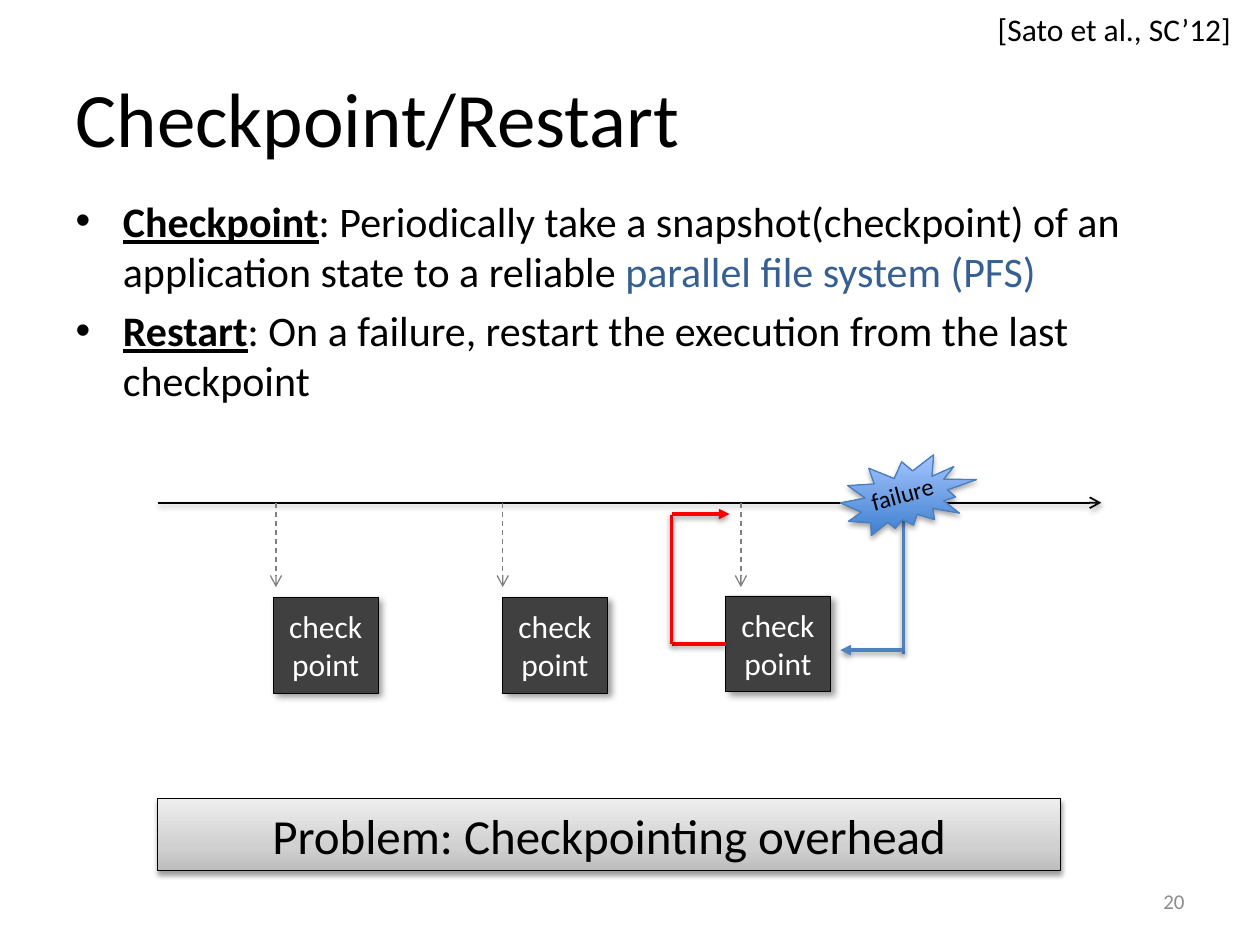
from dataclasses import dataclass

from lxml.etree import SubElement
from pptx import Presentation
from pptx.dml.color import RGBColor
from pptx.enum.dml import MSO_LINE
from pptx.enum.shapes import MSO_CONNECTOR, MSO_SHAPE as Shape
from pptx.enum.text import MSO_ANCHOR as Anchor, PP_ALIGN as Align
from pptx.oxml.ns import qn
from pptx.util import Emu, Pt

PX = 9144  # 100 px to the inch
FONT = "Calibri"
BLACK = RGBColor(0x00, 0x00, 0x00)
WHITE = RGBColor(0xFF, 0xFF, 0xFF)
RED = RGBColor(0xFF, 0x00, 0x00)
BLUE = RGBColor(0x4F, 0x81, 0xBD)
PFS_BLUE = RGBColor(0x37, 0x60, 0x92)
SEAL_LINE = RGBColor(0x4B, 0x7E, 0xBC)
GRAY = RGBColor(0x80, 0x80, 0x80)
NUMBER_GRAY = RGBColor(0x8C, 0x8C, 0x8C)
CHARCOAL = RGBColor(0x40, 0x40, 0x40)
BAR_STOPS = [(0, RGBColor(0xBD, 0xBD, 0xBD)), (35, RGBColor(0xD1, 0xD1, 0xD1)),
             (100, RGBColor(0xEE, 0xEE, 0xEE))]
SEAL_STOPS = [(0, RGBColor(0x3F, 0x80, 0xCE)), (100, RGBColor(0xA4, 0xC4, 0xFF))]


@dataclass(frozen=True)
class Box:
    left: int
    top: int
    width: int
    height: int

    def emu(self) -> list[Emu]:
        return [Emu(v * PX) for v in (self.left, self.top, self.width, self.height)]


@dataclass(frozen=True)
class Shadow:
    """Opacity in percent, blur and distance in points, angle in degrees."""
    opacity: int
    blur: float
    distance: float
    angle: int


@dataclass(frozen=True)
class Checkpoint:
    arrow_x: int
    left: int
    top: int


SOFT = Shadow(38, 3.1, 1.6, 90)
SEAL_SHADOW = Shadow(35, 3.1, 1.8, 90)
BOX_SHADOW = Shadow(40, 4, 3, 45)
TIMELINE_Y = 399
CHECKPOINTS = [Checkpoint(219, 217, 474), Checkpoint(399, 399, 474),
               Checkpoint(588, 576, 473)]


def add_text(p, text: str, *, size: int, color=BLACK, bold=False, underline=False,
             align=None) -> None:
    r = p.add_run()
    r.text = text
    f = r.font
    f.name, f.size, f.bold, f.underline = FONT, Pt(size), bold, underline
    f.color.rgb = color
    if align is not None:
        p.alignment = align


def set_effect(sp, shadow: Shadow | None) -> None:
    """Give a shape or connector its own shadow, or none."""
    spPr = sp._element.spPr
    effects = SubElement(spPr, qn("a:effectLst"))
    if shadow:
        outer = SubElement(effects, qn("a:outerShdw"), blurRad=str(Pt(shadow.blur)),
                           dist=str(Pt(shadow.distance)), dir=str(shadow.angle * 60000),
                           rotWithShape="0")
        clr = SubElement(outer, qn("a:srgbClr"), val=str(BLACK))
        SubElement(clr, qn("a:alpha"), val=str(shadow.opacity * 1000))


def set_gradient(sp, stops: list[tuple[int, RGBColor]]) -> None:
    sp.fill.gradient()
    sp.fill.gradient_angle = 90
    gs_list = sp._element.spPr.find(qn("a:gradFill")).find(qn("a:gsLst"))
    for gs in list(gs_list):
        gs_list.remove(gs)
    for position, color in stops:
        gs = SubElement(gs_list, qn("a:gs"), pos=str(position * 1000))
        SubElement(gs, qn("a:srgbClr"), val=str(color))


def add_block(slide, kind, box: Box, fill, line: RGBColor, weight: float, shadow: Shadow):
    """Draw a preset shape; fill is a colour or a list of gradient stops."""
    sp = slide.shapes.add_shape(kind, *box.emu())
    if isinstance(fill, RGBColor):
        sp.fill.solid()
        sp.fill.fore_color.rgb = fill
    else:
        set_gradient(sp, fill)
    sp.line.color.rgb = line
    sp.line.width = Pt(weight)
    set_effect(sp, shadow)
    return sp


def add_line(slide, start: tuple[int, int], end: tuple[int, int], color: RGBColor,
             weight: float, *, arrow: str | None = None, dashed=False, shadow=SOFT):
    cx = slide.shapes.add_connector(MSO_CONNECTOR.STRAIGHT,
                                    *(Emu(v * PX) for v in (*start, *end)))
    cx.line.color.rgb = color
    cx.line.width = Pt(weight)
    if dashed:
        cx.line.dash_style = MSO_LINE.DASH
    if arrow:
        SubElement(cx._element.spPr.find(qn("a:ln")), qn("a:tailEnd"), type=arrow)
    set_effect(cx, shadow)
    return cx


def add_label(slide, box: Box, text: str, *, anchor=Anchor.TOP, wrap=True, rotation=0.0,
              **text_format) -> None:
    tb = slide.shapes.add_textbox(*box.emu())
    tb.rotation = rotation
    tf = tb.text_frame
    tf.word_wrap, tf.vertical_anchor = wrap, anchor
    add_text(tf.paragraphs[0], text, **text_format)


def add_checkpoint(slide, c: Checkpoint):
    add_line(slide, (c.arrow_x, TIMELINE_Y), (c.arrow_x, 466), GRAY, 0.75,
             arrow="arrow", dashed=True, shadow=None)
    sp = add_block(slide, Shape.RECTANGLE, Box(c.left, c.top, 83, 76), CHARCOAL, BLACK,
                   0.25, BOX_SHADOW)
    sp.text_frame.vertical_anchor = Anchor.MIDDLE
    add_text(sp.text_frame.paragraphs[0], "checkpoint", size=18, color=WHITE,
             align=Align.CENTER)
    return sp


def fill_placeholders(slide) -> None:
    title, body = slide.shapes.title, slide.placeholders[1]
    for ph, box in ((title, Box(50, 30, 900, 125)), (body, Box(50, 150, 900, 425))):
        ph.left, ph.top, ph.width, ph.height = box.emu()
    add_text(title.text_frame.paragraphs[0], "Checkpoint/Restart", size=44,
             align=Align.LEFT)
    tf = body.text_frame
    items = [
        ("Checkpoint", ": Periodically take a snapshot(checkpoint) of an application "
                       "state to a reliable ", "parallel file system (PFS)"),
        ("Restart", ": On a failure, restart the execution from the last checkpoint", ""),
    ]
    for i, (term, meaning, highlight) in enumerate(items):
        p = tf.add_paragraph() if i else tf.paragraphs[0]
        add_text(p, term, size=24, bold=True, underline=True)
        add_text(p, meaning, size=24)
        if highlight:
            add_text(p, highlight, size=24, color=PFS_BLUE)


def draw_timeline(slide) -> None:
    add_line(slide, (125, TIMELINE_Y), (874, TIMELINE_Y), BLACK, 1, arrow="arrow")
    last = [add_checkpoint(slide, c) for c in CHECKPOINTS][-1]

    restart = add_line(slide, (533, 511), (576, 511), RED, 2)
    restart.end_connect(last, 1)
    add_line(slide, (533, 511), (533, 409), RED, 2)
    add_line(slide, (533, 408), (579, 408), RED, 2, arrow="triangle")

    add_line(slide, (717, 408), (717, 519), BLUE, 2)
    add_line(slide, (717, 516), (667, 516), BLUE, 2, arrow="triangle")
    add_block(slide, Shape.EXPLOSION2, Box(667, 361, 108, 64), SEAL_STOPS, SEAL_LINE,
              0.75, SEAL_SHADOW)
    add_label(slide, Box(681, 375, 71, 34), "failure", size=14, rotation=344.8)


def main() -> None:
    prs = Presentation()
    prs.slide_width, prs.slide_height = Emu(1000 * PX), Emu(750 * PX)
    slide = prs.slides.add_slide(prs.slide_layouts[1])
    fill_placeholders(slide)
    draw_timeline(slide)
    bar = add_block(slide, Shape.RECTANGLE, Box(125, 634, 717, 57), BAR_STOPS, BLACK,
                    0.75, SOFT)
    bar.text_frame.vertical_anchor = Anchor.TOP
    add_text(bar.text_frame.paragraphs[0], "Problem: Checkpointing overhead", size=28,
             align=Align.CENTER)
    add_label(slide, Box(782, 3, 207, 40), "[Sato et al., SC’12]", size=18, wrap=False)
    add_label(slide, Box(717, 695, 233, 40), "20", size=12, color=NUMBER_GRAY,
              align=Align.RIGHT, anchor=Anchor.MIDDLE)
    prs.save("out.pptx")


if __name__ == "__main__":
    main()
